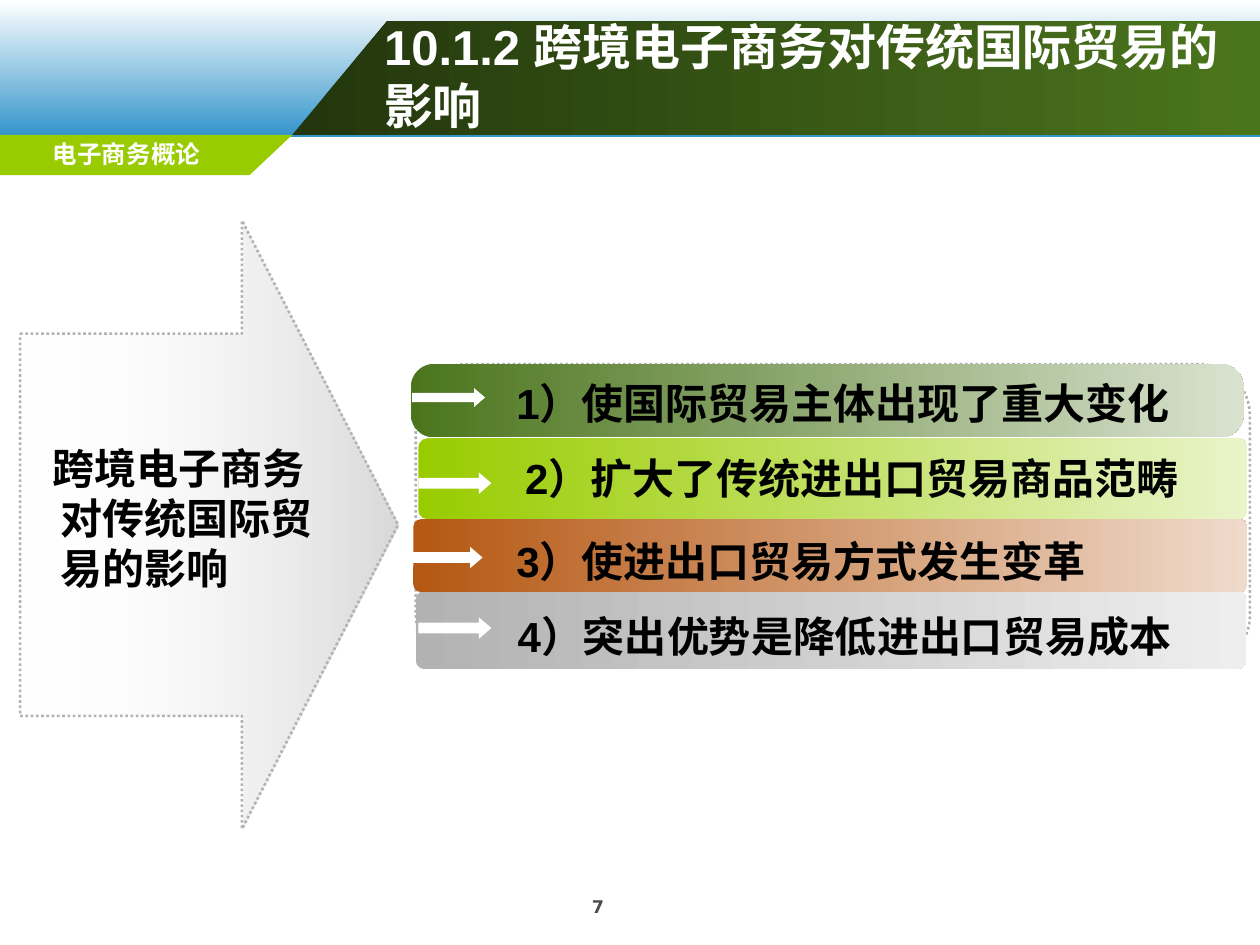
from dataclasses import dataclass

from lxml.etree import SubElement
from pptx import Presentation
from pptx.dml.color import RGBColor
from pptx.enum.dml import MSO_LINE
from pptx.enum.shapes import MSO_SHAPE as Preset
from pptx.enum.text import MSO_ANCHOR as Anchor, PP_ALIGN as Align
from pptx.oxml.ns import qn
from pptx.shapes.autoshape import Shape
from pptx.slide import Slide
from pptx.text.text import TextFrame
from pptx.util import Inches, Pt

WHITE = RGBColor(0xFF, 0xFF, 0xFF)
BLACK = RGBColor(0, 0, 0)
SKY = RGBColor(0x31, 0x94, 0xCB)
DARK_GREEN = RGBColor(0x23, 0x36, 0x0D)
GREEN = RGBColor(0x4B, 0x75, 0x1D)
PALE_GREEN = RGBColor(0xD9, 0xE2, 0xCF)
LIME = RGBColor(0x99, 0xCC, 0x00)
PALE_LIME = RGBColor(0xE9, 0xF4, 0xC9)
RUST = RGBColor(0xB5, 0x58, 0x13)
PALE_RUST = RGBColor(0xEF, 0xDA, 0xCB)
GRAY = RGBColor(0xB2, 0xB2, 0xB2)
PALE_GRAY = RGBColor(0xEE, 0xEE, 0xEE)
NUMBER_GRAY = RGBColor(0x4D, 0x4D, 0x4D)


@dataclass(frozen=True)
class Box:
    left: float
    top: float
    width: float
    height: float

    def lengths(self) -> list[int]:
        return [Inches(v) for v in (self.left, self.top, self.width, self.height)]


@dataclass(frozen=True)
class Bar:
    text: str
    box: Box
    rounding: float
    start: RGBColor
    end: RGBColor
    text_box: Box
    arrow: Box


BARS = [
    Bar("2）扩大了传统进出口贸易商品范畴", Box(3.32, 3.48, 6.58, 0.64), 0.109, LIME, PALE_LIME,
        Box(4.07, 3.54, 5.77, 0.5), Box(3.32, 3.75, 0.58, 0.17)),
    Bar("1）使国际贸易主体出现了重大变化", Box(3.26, 2.89, 6.61, 0.58), 0.315, GREEN, PALE_GREEN,
        Box(4, 2.95, 5.5, 0.5), Box(3.27, 3.08, 0.58, 0.15)),
    Bar("4）突出优势是降低进出口贸易成本", Box(3.3, 4.69, 6.59, 0.62), 0.109, GRAY, PALE_GRAY,
        Box(4.01, 4.8, 5.78, 0.5), Box(3.32, 4.9, 0.58, 0.17)),
    Bar("3）使进出口贸易方式发生变革", Box(3.28, 4.12, 6.62, 0.58), 0.109, RUST, PALE_RUST,
        Box(4, 4.2, 5.61, 0.5), Box(3.25, 4.34, 0.58, 0.17)),
]


def add_preset(slide: Slide, preset: Preset, box: Box, *adjustments: float) -> Shape:
    shape = slide.shapes.add_shape(preset, *box.lengths())
    shape.shadow.inherit = False
    shape.line.fill.background()
    for index, value in enumerate(adjustments):
        shape.adjustments[index] = value
    return shape


def add_outline(slide: Slide, points: list[tuple[float, float]]) -> Shape:
    corners = [(Inches(x), Inches(y)) for x, y in points]
    builder = slide.shapes.build_freeform(*corners[0])
    builder.add_line_segments(corners[1:], close=True)
    shape = builder.convert_to_shape()
    shape.shadow.inherit = False
    shape.line.fill.background()
    return shape


def fill_solid(shape: Shape, color: RGBColor) -> None:
    shape.fill.solid()
    shape.fill.fore_color.rgb = color


def fill_gradient(shape: Shape, start: RGBColor, end: RGBColor, angle: float = 0) -> None:
    shape.fill.gradient()
    shape.fill.gradient_angle = angle
    for stop, color, position in zip(shape.fill.gradient_stops, (start, end), (0, 1)):
        stop.color.rgb = color
        stop.position = position


def set_stop_opacity(shape: Shape, *percents: int) -> None:
    colors = shape.element.spPr.find(qn("a:gradFill")).iter(qn("a:srgbClr"))
    for color, percent in zip(colors, percents):
        SubElement(color, qn("a:alpha")).set("val", str(percent * 1000))


def dot_line(shape: Shape) -> None:
    shape.line.color.rgb = GRAY
    shape.line.width = Pt(1.5)
    shape.line.dash_style = MSO_LINE.ROUND_DOT


def add_text(slide: Slide, text: str, box: Box, size: float, color: RGBColor = BLACK,
             font_name: str = "Arial", align: Align = Align.LEFT) -> TextFrame:
    text_frame = slide.shapes.add_textbox(*box.lengths()).text_frame
    text_frame.word_wrap = True
    text_frame.text = text
    paragraph = text_frame.paragraphs[0]
    paragraph.alignment = align
    font = paragraph.runs[0].font
    font.name, font.size, font.bold = font_name, Pt(size), True
    font.color.rgb = color
    return text_frame


def add_header(slide: Slide) -> None:
    sky = add_preset(slide, Preset.RECTANGLE, Box(0, 0, 10, 1.09))
    fill_gradient(sky, WHITE, SKY, 270)
    banner = add_outline(slide, [(2.32, 1.07), (10.01, 1.07), (10.01, 0.17), (3.07, 0.17)])
    fill_gradient(banner, DARK_GREEN, GREEN)
    course_tab = add_outline(slide, [(0, 1.07), (2.32, 1.07), (1.98, 1.39), (0, 1.39)])
    fill_solid(course_tab, LIME)
    add_text(slide, "电子商务概论", Box(0.04, 1.05, 1.93, 0.31), 14, WHITE, "DejaVu Sans", Align.CENTER)
    add_text(slide, "7", Box(3.58, 7.06, 2.33, 0.33), 10, NUMBER_GRAY, "DejaVu Sans", Align.CENTER)
    title = add_text(slide, "10.1.2 跨境电子商务对传统国际贸易的影响", Box(2.95, 0.25, 6.84, 0.7), 28, WHITE)
    title.vertical_anchor = Anchor.MIDDLE


def add_topic_arrow(slide: Slide) -> None:
    arrow = add_preset(slide, Preset.RIGHT_ARROW, Box(0.16, 1.75, 3, 4.83), 0.628, 0.413)
    fill_gradient(arrow, WHITE, GRAY)
    set_stop_opacity(arrow, 0, 50)
    dot_line(arrow)
    topic = add_text(slide, "跨境电子商务对传统国际贸易的影响", Box(0.25, 3.46, 2.42, 1.31), 24)
    properties = topic.paragraphs[0]._p.get_or_add_pPr()
    properties.set("marL", str(Inches(0.13)))
    properties.set("indent", str(Inches(-0.06)))


def add_bar(slide: Slide, bar: Bar) -> None:
    shape = add_preset(slide, Preset.ROUNDED_RECTANGLE, bar.box, bar.rounding)
    fill_gradient(shape, bar.start, bar.end)
    arrow = add_preset(slide, Preset.RIGHT_ARROW, bar.arrow, 0.5, 0.583)
    fill_solid(arrow, WHITE)
    add_text(slide, bar.text, bar.text_box, 24)


def main() -> None:
    presentation = Presentation()
    presentation.slide_width, presentation.slide_height = Inches(10), Inches(7.5)
    slide = presentation.slides.add_slide(presentation.slide_layouts[6])
    add_header(slide)
    add_topic_arrow(slide)
    frame = add_preset(slide, Preset.ROUNDED_RECTANGLE, Box(3.3, 2.89, 6.62, 2.4), 0.17)
    frame.fill.background()
    dot_line(frame)
    for bar in BARS:
        add_bar(slide, bar)
    presentation.save("out.pptx")


if __name__ == "__main__":
    main()
